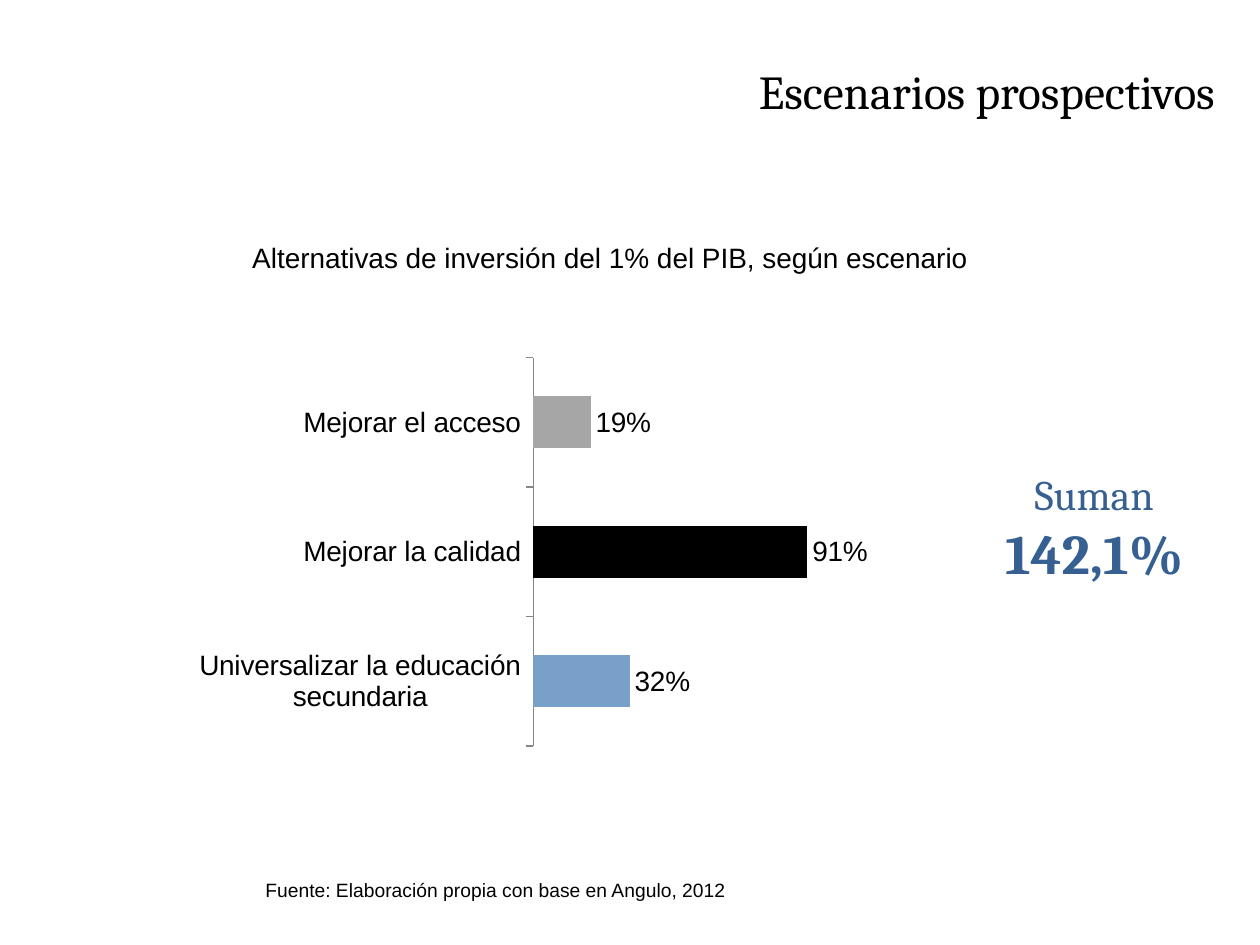
from dataclasses import dataclass

from lxml import etree
from pptx import Presentation
from pptx import util as u
from pptx.chart import data
from pptx.dml.color import RGBColor
from pptx.enum import chart as ch
from pptx.enum import text as tx
from pptx.oxml import ns

HUES = {"ink": "000000", "gray": "A6A6A6", "sky": "78A0C8",
        "navy": "376092", "axis": "868686"}
LEFT, MID, RIGHT = tx.PP_ALIGN.LEFT, tx.PP_ALIGN.CENTER, tx.PP_ALIGN.RIGHT


@dataclass
class Box:
    left: float
    top: float
    width: float
    height: float

    def place(self) -> tuple:
        return tuple(u.Cm(n) for n in (self.left, self.top, self.width, self.height))


@dataclass
class Bar:
    name: str
    share: float
    hue: str


BARS = [
    Bar("Mejorar el acceso", 0.19, "gray"),
    Bar("Mejorar la calidad", 0.91, "ink"),
    Bar("Universalizar la educación secundaria", 0.32, "sky"),
]
PLOT = {"x": 0.516, "y": 0.051, "w": 0.39, "h": 0.833}


def color(hue: str) -> RGBColor:
    return RGBColor.from_string(HUES[hue])


def style(font, size: float, face: str = "Arial", hue: str = "ink", bold: bool = False) -> None:
    font.size, font.name, font.bold = u.Pt(size), face, bold
    font.color.rgb = color(hue)


def write(frame, words: str, align=LEFT, first: bool = True, **form) -> None:
    para = frame.paragraphs[0] if first else frame.add_paragraph()
    para.alignment = align
    run = para.add_run()
    run.text = words
    style(run.font, **form)


def label(slide, box: Box, wrap: bool = False):
    frame = slide.shapes.add_textbox(*box.place()).text_frame
    frame.word_wrap = wrap
    return frame


def head(slide, box: Box, words: str) -> None:
    title = slide.shapes.title
    title.left, title.top, title.width, title.height = box.place()
    frame = title.text_frame
    frame.auto_size = tx.MSO_AUTO_SIZE.NONE
    frame.vertical_anchor = tx.MSO_ANCHOR.TOP
    write(frame, words, RIGHT, size=27, face="Cambria")


def pin(chart) -> None:
    area = chart.element.find(".//" + ns.qn("c:plotArea"))
    for old in area.findall(ns.qn("c:layout")):
        area.remove(old)
    layout = etree.Element(ns.qn("c:layout"))
    area.insert(0, layout)
    manual = etree.SubElement(layout, ns.qn("c:manualLayout"))
    rules = {"layoutTarget": "inner", "xMode": "edge", "yMode": "edge", **PLOT}
    for tag, val in rules.items():
        etree.SubElement(manual, ns.qn("c:" + tag)).set("val", str(val))


def graph(slide, box: Box, bars: list[Bar]) -> None:
    feed = data.CategoryChartData(number_format="0%")
    feed.categories = [bar.name for bar in bars]
    feed.add_series("Series 1", [bar.share for bar in bars])
    chart = slide.shapes.add_chart(ch.XL_CHART_TYPE.BAR_CLUSTERED, *box.place(), feed).chart
    chart.has_title = chart.has_legend = False
    style(chart.font, 16)
    pin(chart)

    cats, vals = chart.category_axis, chart.value_axis
    cats.reverse_order = True
    cats.major_tick_mark = ch.XL_TICK_MARK.OUTSIDE
    cats.format.line.color.rgb = color("axis")
    cats.format.line.width = u.Pt(0.75)
    vals.minimum_scale, vals.maximum_scale = 0, 1
    vals.has_major_gridlines = vals.visible = False

    plot = chart.plots[0]
    plot.gap_width = 150
    plot.vary_by_categories = False
    plot.has_data_labels = True
    tags = plot.data_labels
    tags.show_value = True
    tags.number_format, tags.number_format_is_linked = "0%", False
    tags.position = ch.XL_LABEL_POSITION.OUTSIDE_END
    style(tags.font, 16)
    for i, bar in enumerate(bars):
        fill = plot.series[0].points[i].format.fill
        fill.solid()
        fill.fore_color.rgb = color(bar.hue)


def main() -> None:
    deck = Presentation()
    deck.slide_width, deck.slide_height = u.Cm(25.4), u.Cm(19.05)
    slide = deck.slides.add_slide(deck.slide_layouts[5])
    head(slide, Box(7.7, 1.12, 17.04, 1.42), "Escenarios prospectivos")
    write(label(slide, Box(2.8, 4.72, 19, 1.1), wrap=True),
          "Alternativas de inversión del 1% del PIB, según escenario", MID, size=16)
    graph(slide, Box(2.72, 6.73, 15.57, 9.4), BARS)
    write(label(slide, Box(5.1, 17.58, 9.88, 0.74)),
          "Fuente: Elaboración propia con base en Angulo, 2012", size=11)
    total = label(slide, Box(19.84, 9.32, 4.44, 2.64))
    write(total, "Suman", MID, size=24, face="Cambria", hue="navy")
    write(total, "142,1%", MID, first=False, size=32, face="Cambria", hue="navy", bold=True)
    deck.save("out.pptx")


if __name__ == "__main__":
    main()
